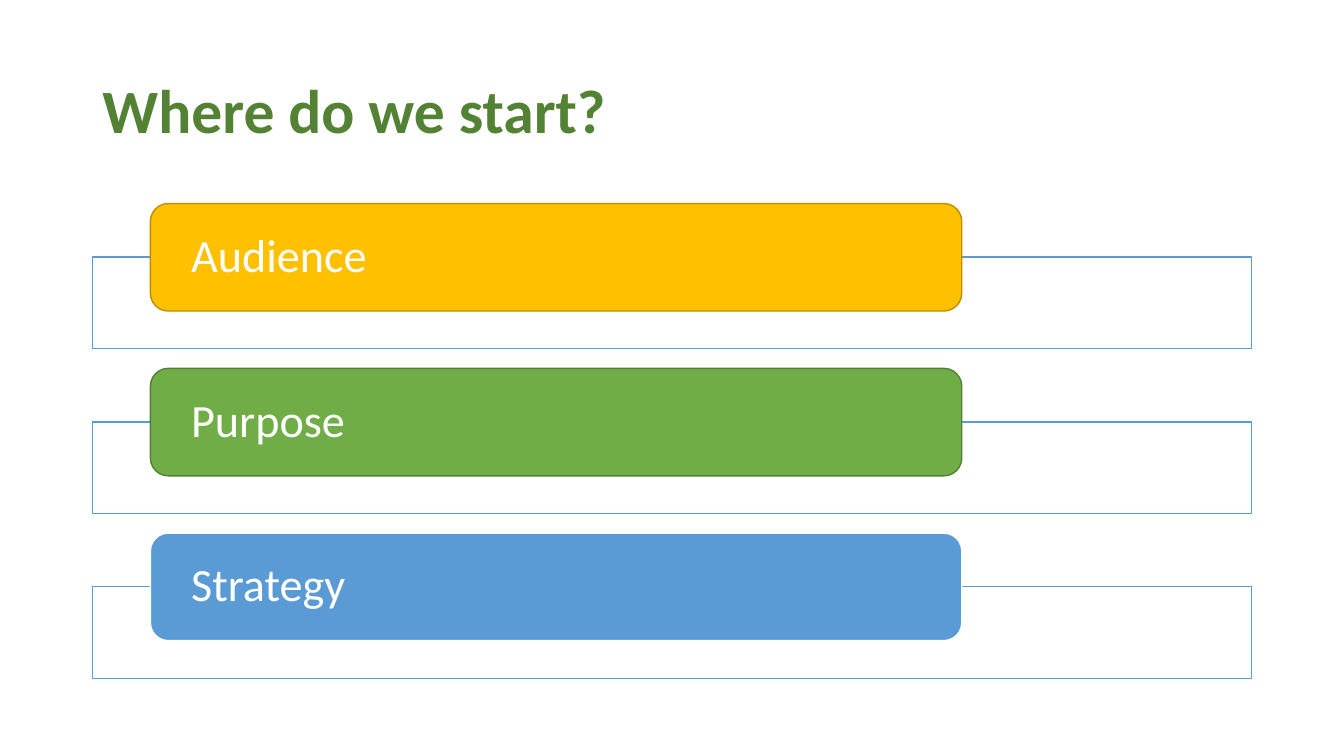
from pptx import Presentation
from pptx.dml.color import RGBColor
from pptx.enum.shapes import MSO_SHAPE
from pptx.enum.text import MSO_ANCHOR, PP_ALIGN
from pptx.util import Pt

RECTANGLE, ROUNDED = MSO_SHAPE.RECTANGLE, MSO_SHAPE.ROUNDED_RECTANGLE
MIDDLE, LEFT = MSO_ANCHOR.MIDDLE, PP_ALIGN.LEFT

COLOURS = {
    "white": "FFFFFF",
    "title": "548235",
    "gold": "FFC000",
    "dark gold": "BD8E00",
    "green": "70AD47",
    "dark green": "538035",
    "blue": "5B9BD5",
}
STEPS = [
    ("Audience", "gold", "dark gold"),
    ("Purpose", "green", "dark green"),
    ("Strategy", "blue", "white"),
]
STEP_TOP, STEP_PITCH = 145.4, 117.7


class StepPage:
    """Hold the style and the current page, and add its elements."""

    font = "Calibri"

    def __init__(self, deck):
        self.page = deck.slides.add_slide(deck.slide_layouts[5])

    def colour(self, name):
        return RGBColor.from_string(COLOURS[name])

    def set_text(self, shape, text, size, colour, inset, bold=False):
        frame = shape.text_frame
        frame_format = {
            "word_wrap": True,
            "vertical_anchor": MIDDLE,
            "margin_left": Pt(inset),
            "margin_right": Pt(inset),
        }
        for name, value in frame_format.items():
            setattr(frame, name, value)
        para = frame.paragraphs[0]
        para.alignment, para.line_spacing = LEFT, 0.9
        span = para.add_run()
        span.text = text
        font_format = {"name": self.font, "size": Pt(size), "bold": bold}
        for name, value in font_format.items():
            setattr(span.font, name, value)
        span.font.color.rgb = self.colour(colour)

    def title(self, text, left, top, width, height):
        box = self.page.shapes.title
        place = {"left": left, "top": top, "width": width, "height": height}
        for name, value in place.items():
            setattr(box, name, Pt(value))
        self.set_text(box, text, 44, "title", 7.2, bold=True)

    def box(self, kind, left, top, width, height, fill, line):
        lengths = [Pt(value) for value in (left, top, width, height)]
        box = self.page.shapes.add_shape(kind, *lengths)
        box.shadow.inherit = False
        box.fill.solid()
        box.fill.fore_color.rgb = self.colour(fill)
        box.line.color.rgb = self.colour(line)
        box.line.width = Pt(1)
        return box

    def step(self, text, top, fill, line):
        self.box(RECTANGLE, 66, top + 38.2, 828, 65.5, "white", "blue")
        label = self.box(ROUNDED, 107.4, top, 579.6, 76.8, fill, line)
        self.set_text(label, text, 33, "white", 25.4)


def main():
    deck = Presentation()
    deck.slide_width, deck.slide_height = Pt(960), Pt(540)
    page = StepPage(deck)
    page.title("Where do we start?", 66, 28.75, 828, 104.4)
    for index, (text, fill, line) in enumerate(STEPS):
        page.step(text, STEP_TOP + index * STEP_PITCH, fill, line)
    deck.save("out.pptx")


if __name__ == "__main__":
    main()
